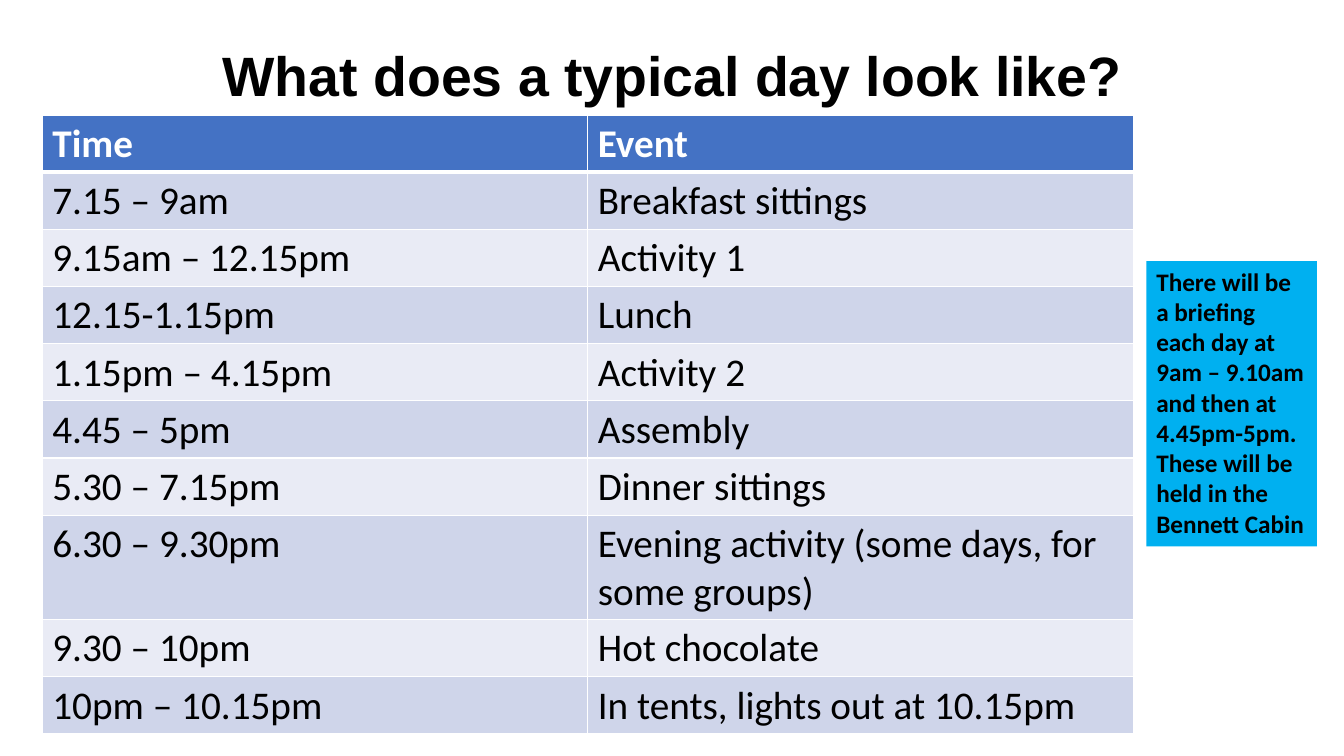
from dataclasses import dataclass

from lxml import etree
from pptx import Presentation
from pptx.dml.color import RGBColor
from pptx.enum.shapes import MSO_SHAPE
from pptx.enum.text import MSO_ANCHOR, MSO_AUTO_SIZE, PP_ALIGN
from pptx.oxml.ns import qn
from pptx.util import Emu, Pt

RECTANGLE = MSO_SHAPE.RECTANGLE
MIDDLE, TOP = MSO_ANCHOR.MIDDLE, MSO_ANCHOR.TOP
CENTER, LEFT = PP_ALIGN.CENTER, PP_ALIGN.LEFT
GROW = MSO_AUTO_SIZE.SHAPE_TO_FIT_TEXT

EMU_PER_PX = 9144  # 100 px to the inch
COLORS = {
    "black": "000000",
    "white": "FFFFFF",
    "header": "4472C4",
    "odd": "CFD5EA",
    "even": "E9EBF5",
    "note": "00B0F0",
}


@dataclass
class Slot:
    time: str
    event: str
    height: int = 43


SCHEDULE = [
    Slot("Time", "Event"),
    Slot("7.15 – 9am", "Breakfast sittings"),
    Slot("9.15am – 12.15pm", "Activity 1"),
    Slot("12.15-1.15pm", "Lunch"),
    Slot("1.15pm – 4.15pm", "Activity 2"),
    Slot("4.45 – 5pm", "Assembly"),
    Slot("5.30 – 7.15pm", "Dinner sittings"),
    Slot("6.30 – 9.30pm", "Evening activity (some days, for some groups)", 75),
    Slot("9.30 – 10pm", "Hot chocolate"),
    Slot("10pm – 10.15pm", "In tents, lights out at 10.15pm", 53),
]


def px(n: int) -> Emu:
    return Emu(n * EMU_PER_PX)


def rgb(name: str) -> RGBColor:
    return RGBColor.from_string(COLORS[name])


def write(tf, text: str, size: float, font: str, color: str, bold: bool, align=LEFT):
    p = tf.paragraphs[0]
    p.text = text
    p.alignment = align
    p.font.size = Pt(size)
    p.font.name = font
    p.font.bold = bold
    p.font.color.rgb = rgb(color)
    return p


def add_borders(cell, row: int) -> None:
    """Draw white cell borders, thicker between the header and the first row."""
    tcPr = cell._tc.get_or_add_tcPr()
    thick = {(0, "lnB"), (1, "lnT")}
    for side in ("lnL", "lnR", "lnT", "lnB"):
        width = Pt(3 if (row, side) in thick else 1)
        ln = etree.SubElement(tcPr, qn(f"a:{side}"), w=str(width))
        fill = etree.SubElement(ln, qn("a:solidFill"))
        etree.SubElement(fill, qn("a:srgbClr"), val=COLORS["white"])


def add_title(s) -> None:
    sp = s.shapes.add_textbox(px(92), px(40), px(1150), px(75))
    tf = sp.text_frame
    tf.word_wrap = True
    tf.vertical_anchor = MIDDLE
    p = write(tf, "What does a typical day look like?", 39.6, "Arial", "black", True, CENTER)
    p.line_spacing = 0.9


def add_schedule(s) -> None:
    frame = s.shapes.add_table(len(SCHEDULE), 2, px(42), px(114), px(1082), px(613))
    table = frame.table
    for i, slot in enumerate(SCHEDULE):
        table.rows[i].height = px(slot.height)
        header = i == 0
        fill = "header" if header else "odd" if i % 2 else "even"
        for j, text in enumerate((slot.time, slot.event)):
            cell = table.cell(i, j)
            add_borders(cell, i)
            cell.fill.solid()
            cell.fill.fore_color.rgb = rgb(fill)
            write(cell.text_frame, text, 28, "Calibri", "white" if header else "black", header)
    frame.height = px(613)


def add_note(s) -> None:
    sp = s.shapes.add_shape(RECTANGLE, px(1137), px(259), px(169), px(283))
    sp.shadow.inherit = False
    sp.fill.solid()
    sp.fill.fore_color.rgb = rgb("note")
    sp.line.fill.background()
    tf = sp.text_frame
    tf.word_wrap = True
    tf.auto_size = GROW
    tf.vertical_anchor = TOP
    text = (
        "There will be a briefing each day at 9am – 9.10am and then at 4.45pm-5pm. "
        "These will be held in the Bennett Cabin"
    )
    write(tf, text, 18, "Calibri", "black", True)


def main() -> None:
    prs = Presentation()
    prs.slide_width, prs.slide_height = px(1333), px(750)
    s = prs.slides.add_slide(prs.slide_layouts[6])
    add_title(s)
    add_schedule(s)
    add_note(s)
    prs.save("out.pptx")


if __name__ == "__main__":
    main()
